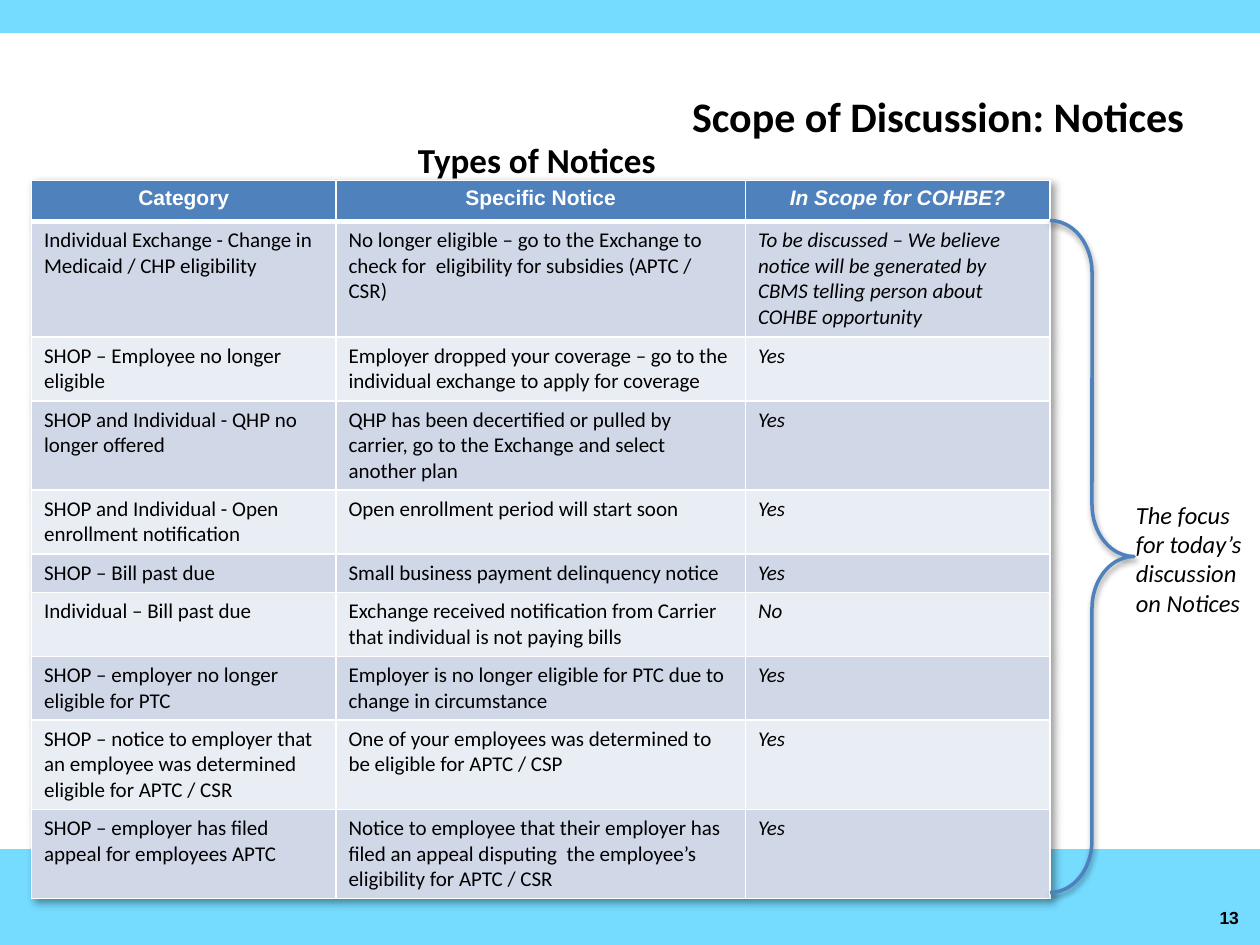
from lxml.etree import SubElement
from pptx import Presentation
from pptx.dml.color import RGBColor
from pptx.enum.shapes import MSO_SHAPE
from pptx.enum.text import MSO_ANCHOR, PP_ALIGN
from pptx.oxml import parse_xml
from pptx.oxml.ns import nsdecls, qn
from pptx.util import Pt

SKY = RGBColor(0x75, 0xDB, 0xFF)
BLUE = RGBColor(0x4F, 0x81, 0xBD)
BAND = RGBColor(0xD0, 0xD8, 0xE8)
PALE = RGBColor(0xE9, 0xED, 0xF4)
WHITE = RGBColor(0xFF, 0xFF, 0xFF)
BLACK = RGBColor(0, 0, 0)

HEAD = ("Category", "Specific Notice", "In Scope for COHBE?")
ROWS = [
    ("Individual Exchange - Change in Medicaid / CHP eligibility",
     "No longer eligible – go to the Exchange to check for  eligibility for subsidies (APTC / CSR)",
     "To be discussed – We believe notice will be generated by CBMS telling person about COHBE opportunity"),
    ("SHOP – Employee no longer eligible",
     "Employer dropped your coverage – go to the individual exchange to apply for coverage", "Yes"),
    ("SHOP and Individual - QHP no longer offered",
     "QHP has been decertified or pulled by carrier, go to the Exchange and select another plan", "Yes"),
    ("SHOP and Individual - Open enrollment notification",
     "Open enrollment period will start soon", "Yes"),
    ("SHOP – Bill past due", "Small business payment delinquency notice", "Yes"),
    ("Individual – Bill past due",
     "Exchange received notification from Carrier that individual is not paying bills", "No"),
    ("SHOP – employer no longer eligible for PTC",
     "Employer is no longer eligible for PTC due to change in circumstance", "Yes"),
    ("SHOP – notice to employer that an employee was determined eligible for APTC / CSR",
     "One of your employees was determined to be eligible for APTC / CSP", "Yes"),
    ("SHOP – employer has filed appeal for employees APTC",
     "Notice to employee that their employer has filed an appeal disputing  the employee’s "
     "eligibility for APTC / CSR", "Yes"),
]
WIDTHS = (174, 234, 174)
HEIGHTS = (23.6, 66, 36.5, 51, 36.5, 22, 36.5, 36.5, 51, 51)


def points(box):
    return [Pt(n) for n in box]


def write(frame, text, size, font="Calibri", color=BLACK, bold=False,
          italic=False, align=PP_ALIGN.LEFT):
    para = frame.paragraphs[0]
    para.alignment = align
    run = para.add_run()
    run.text = text
    face = run.font
    face.name, face.size, face.bold, face.italic = font, Pt(size), bold, italic
    face.color.rgb = color


def label(slide, box, text, size, wrap=True, **style):
    frame = slide.shapes.add_textbox(*points(box)).text_frame
    frame.word_wrap = wrap
    write(frame, text, size, **style)


def shade(blur, dist, angle, alpha):
    return parse_xml(
        f'<a:effectLst {nsdecls("a")}><a:outerShdw blurRad="{Pt(blur)}" dist="{Pt(dist)}" '
        f'dir="{angle * 60000}" rotWithShape="0"><a:srgbClr val="000000">'
        f'<a:alpha val="{alpha * 1000}"/></a:srgbClr></a:outerShdw></a:effectLst>')


def add_bar(slide, box):
    bar = slide.shapes.add_shape(MSO_SHAPE.RECTANGLE, *points(box))
    bar.shadow.inherit = False
    bar.fill.solid()
    bar.fill.fore_color.rgb = SKY
    bar.line.color.rgb = SKY
    bar.line.width = Pt(2)


def add_title(slide, box, text):
    title = slide.shapes.title
    title.left, title.top, title.width, title.height = points(box)
    frame = title.text_frame
    frame.word_wrap = False
    frame.vertical_anchor = MSO_ANCHOR.MIDDLE
    write(frame, text, 24, bold=True, align=PP_ALIGN.RIGHT)


def edge(cell, side, width):
    line = SubElement(cell._tc.get_or_add_tcPr(), qn(f"a:{side}"), w=str(Pt(width)))
    fill = SubElement(line, qn("a:solidFill"))
    SubElement(fill, qn("a:srgbClr"), val=str(WHITE))


def add_grid(slide, box):
    frame = slide.shapes.add_table(len(ROWS) + 1, len(HEAD), *points(box))
    table = frame.table
    table._tbl.tblPr.insert(0, shade(4, 3, 45, 40))
    for col, width in zip(table.columns, WIDTHS):
        col.width = Pt(width)
    for row, height in zip(table.rows, HEIGHTS):
        row.height = Pt(height)
    for r, texts in enumerate([HEAD] + ROWS):
        for c, text in enumerate(texts):
            cell = table.cell(r, c)
            # Borders come before the fill in the cell's XML
            for side in ("lnL", "lnR", "lnT", "lnB"):
                thick = (r, side) in ((0, "lnB"), (1, "lnT"))
                edge(cell, side, 3 if thick else 1)
            cell.fill.solid()
            if r == 0:
                cell.fill.fore_color.rgb = BLUE
                write(cell.text_frame, text, 12, "Arial", WHITE, True, c == 2, PP_ALIGN.CENTER)
            else:
                cell.fill.fore_color.rgb = BAND if r % 2 else PALE
                write(cell.text_frame, text, 12, italic=c == 2)


def add_brace(slide, box):
    brace = slide.shapes.add_shape(MSO_SHAPE.RIGHT_BRACE, *points(box))
    brace.adjustments[0], brace.adjustments[1] = 0.62, 0.5
    brace.fill.background()
    brace.line.color.rgb = BLUE
    brace.line.width = Pt(2)
    brace._element.spPr.append(shade(3.1, 1.6, 90, 38))


def main():
    deck = Presentation()
    deck.slide_width, deck.slide_height = Pt(720), Pt(540)
    slide = deck.slides.add_slide(deck.slide_layouts[5])

    # Page bands and number
    add_bar(slide, (0, 486, 720, 54))
    add_bar(slide, (0, 0, 720, 18))
    label(slide, (689.8, 514.8, 26.6, 19.4), "13", 10, wrap=False, font="Arial", bold=True)

    # Headings
    add_title(slide, (379.4, 48.2, 304.6, 36), "Scope of Discussion: Notices")
    label(slide, (18, 75.6, 582, 32), "Types of Notices ", 20, bold=True, align=PP_ALIGN.CENTER)

    # Notices table with its brace and remark
    add_grid(slide, (18, 103, sum(WIDTHS), sum(HEIGHTS)))
    add_brace(slide, (600, 126, 48, 384))
    label(slide, (642, 282, 76.4, 75), "The focus for today’s discussion on Notices", 14, italic=True)

    deck.save("out.pptx")


if __name__ == "__main__":
    main()
